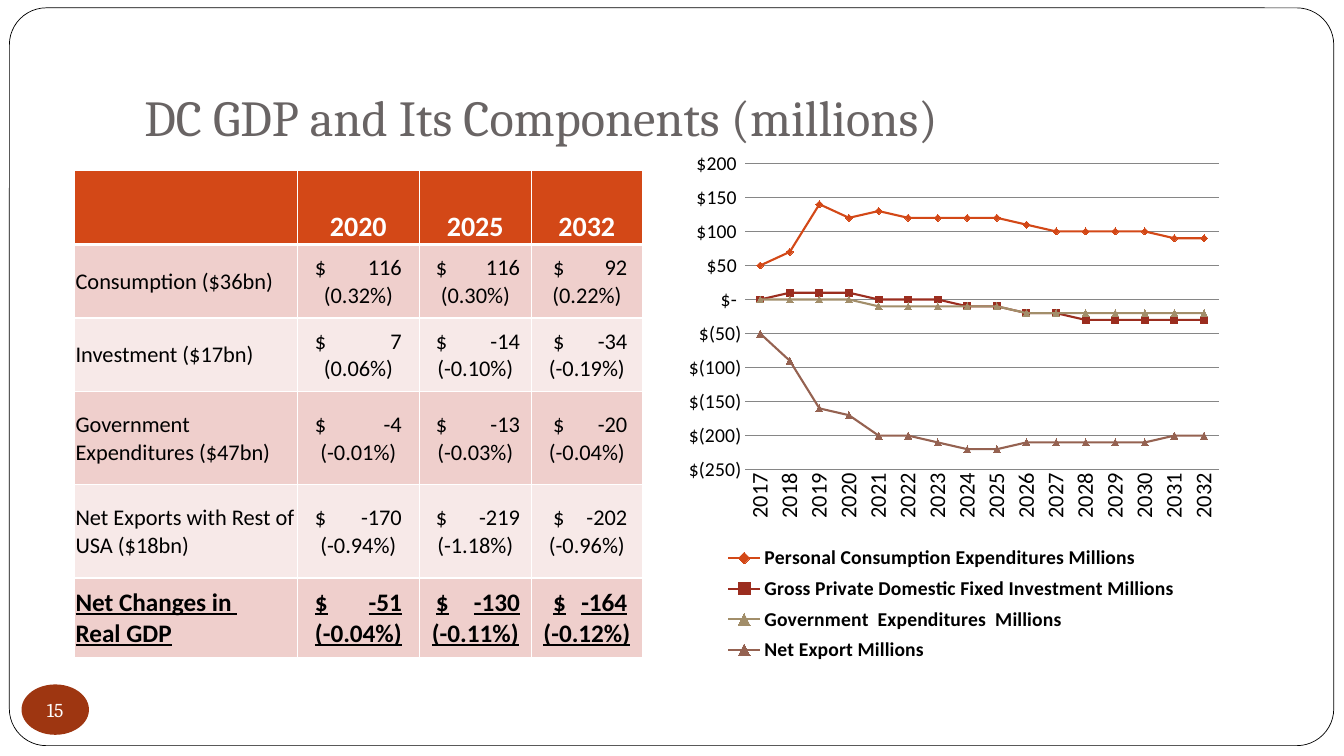
from dataclasses import dataclass

from lxml.etree import SubElement
from pptx import Presentation
from pptx.chart.chart import Chart
from pptx.chart.data import CategoryChartData
from pptx.dml.color import RGBColor
from pptx.enum.chart import (XL_AXIS_CROSSES, XL_CHART_TYPE, XL_LEGEND_POSITION, XL_MARKER_STYLE,
                             XL_TICK_LABEL_POSITION, XL_TICK_MARK)
from pptx.enum.shapes import MSO_SHAPE
from pptx.enum.text import MSO_ANCHOR, PP_ALIGN
from pptx.oxml import parse_xml
from pptx.oxml.ns import nsdecls, qn
from pptx.slide import Slide
from pptx.table import _Cell
from pptx.text.text import Font
from pptx.util import Pt


@dataclass(frozen=True)
class Theme:
    heading: str = "Cambria"
    body: str = "Calibri"
    white: str = "FFFFFF"
    black: str = "000000"
    title: str = "696464"
    header: str = "D34817"
    bands: tuple[str, str] = ("EFCFCC", "F7E9E8")
    badge: str = "9E3611"
    grid: str = "868686"
    title_size: int = 36
    header_size: int = 20
    body_size: int = 16
    total_size: int = 18
    label_size: int = 14


@dataclass(frozen=True)
class Amount:
    value: str
    share: str


@dataclass(frozen=True)
class Component:
    label: str
    amounts: tuple[Amount, ...]
    height: float
    total: bool = False


@dataclass(frozen=True)
class Column:
    year: str
    width: float
    dollar_tab: float
    value_tab: float


@dataclass(frozen=True)
class Line:
    name: str
    values: tuple[int, ...]
    color: str
    marker: XL_MARKER_STYLE


THEME = Theme()
LABEL_WIDTH = 159
HEADER_HEIGHT = 52.6
COLUMNS = (
    Column("2020", 87.4, 12, 74),
    Column("2025", 79.7, 11, 71),
    Column("2032", 79.7, 15, 68),
)
COMPONENTS = (
    Component("Consumption ($36bn)", (
        Amount("116", "(0.32%)"), Amount("116", "(0.30%)"), Amount("92", "(0.22%)")), 52.6),
    Component("Investment ($17bn)", (
        Amount("7", "(0.06%)"), Amount("-14", "(-0.10%)"), Amount("-34", "(-0.19%)")), 52.6),
    Component("Government\vExpenditures ($47bn)", (
        Amount("-4", "(-0.01%)"), Amount("-13", "(-0.03%)"), Amount("-20", "(-0.04%)")), 66.6),
    Component("Net Exports with Rest of USA ($18bn)", (
        Amount("-170", "(-0.94%)"), Amount("-219", "(-1.18%)"), Amount("-202", "(-0.96%)")), 66.6),
    Component("Net Changes in \vReal GDP", (
        Amount("-51", "(-0.04%)"), Amount("-130", "(-0.11%)"), Amount("-164", "(-0.12%)")), 56.6, True),
)
LINES = (
    Line("Personal Consumption Expenditures Millions",
         (50, 70, 140, 120, 130, 120, 120, 120, 120, 110, 100, 100, 100, 100, 90, 90),
         "D34817", XL_MARKER_STYLE.DIAMOND),
    Line("Gross Private Domestic Fixed Investment Millions",
         (0, 10, 10, 10, 0, 0, 0, -10, -10, -20, -20, -30, -30, -30, -30, -30),
         "9B2D1F", XL_MARKER_STYLE.SQUARE),
    Line("Government  Expenditures  Millions",
         (0, 0, 0, 0, -10, -10, -10, -10, -10, -20, -20, -20, -20, -20, -20, -20),
         "A28E6A", XL_MARKER_STYLE.TRIANGLE),
    Line("Net Export Millions",
         (-50, -90, -160, -170, -200, -200, -210, -220, -220, -210, -210, -210, -210, -210, -200, -200),
         "956251", XL_MARKER_STYLE.TRIANGLE),
)


def rgb(color: str) -> RGBColor:
    return RGBColor.from_string(color)


def style(font: Font, name: str, size: float, color: str, bold: bool = False) -> None:
    font.name, font.size, font.bold = name, Pt(size), bold
    font.color.rgb = rgb(color)


def draw_title(s: Slide) -> None:
    sp = s.shapes.title
    sp.left, sp.top, sp.width, sp.height = Pt(96), Pt(21.6), Pt(816), Pt(90)
    tf = sp.text_frame
    tf.text = "DC GDP and Its Components (millions)"
    tf.vertical_anchor = MSO_ANCHOR.BOTTOM
    tf.margin_bottom = Pt(7.2)
    p = tf.paragraphs[0]
    p.alignment = PP_ALIGN.LEFT
    style(p.runs[0].font, THEME.heading, THEME.title_size, THEME.title)


def draw_frame(s: Slide) -> None:
    sp = s.shapes.add_shape(MSO_SHAPE.ROUNDED_RECTANGLE, Pt(6.7), Pt(5.6), Pt(946), Pt(527))
    sp.adjustments[0] = 0.05
    sp.shadow.inherit = False
    sp.fill.solid()
    sp.fill.fore_color.rgb = rgb(THEME.white)
    sp.line.color.rgb = rgb(THEME.black)
    sp.line.width = Pt(0.5)
    s.shapes.title.element.addprevious(sp.element)


def draw_badge(s: Slide) -> None:
    sp = s.shapes.add_shape(MSO_SHAPE.OVAL, Pt(15.4), Pt(488.9), Pt(48.2), Pt(36))
    sp.shadow.inherit = False
    sp.fill.solid()
    sp.fill.fore_color.rgb = rgb(THEME.badge)
    sp.line.fill.background()
    tf = sp.text_frame
    tf.margin_left = tf.margin_right = tf.margin_top = tf.margin_bottom = 0
    tf.word_wrap = False
    tf.vertical_anchor = MSO_ANCHOR.MIDDLE
    tf.text = "15"
    p = tf.paragraphs[0]
    p.alignment = PP_ALIGN.CENTER
    style(p.runs[0].font, THEME.heading, THEME.label_size, THEME.white)


def format_cell(cell: _Cell, fill: str, header: bool = False) -> None:
    cell.fill.solid()
    cell.fill.fore_color.rgb = rgb(fill)
    cell.margin_left = cell.margin_right = cell.margin_top = Pt(0.72)
    cell.margin_bottom = 0
    cell.vertical_anchor = MSO_ANCHOR.BOTTOM if header else MSO_ANCHOR.MIDDLE
    for i, side in enumerate("LRTB"):
        width = Pt(3 if header and side == "B" else 1)
        cell._tc.get_or_add_tcPr().insert(i, parse_xml(
            f'<a:ln{side} {nsdecls("a")} w="{width}"><a:solidFill>'
            f'<a:srgbClr val="{THEME.white}"/></a:solidFill></a:ln{side}>'))


def write_amount(cell: _Cell, amount: Amount, column: Column) -> None:
    tf = cell.text_frame
    p = tf.paragraphs[0]
    p.alignment = PP_ALIGN.LEFT
    for text in ("\t", f"$\t{amount.value}"):
        p.add_run().text = text
    tabs = SubElement(p._p.get_or_add_pPr(), qn("a:tabLst"))
    for pos, align in ((column.dollar_tab, "l"), (column.value_tab, "r")):
        SubElement(tabs, qn("a:tab"), pos=str(Pt(pos)), algn=align)
    p = tf.add_paragraph()
    p.text = amount.share
    p.alignment = PP_ALIGN.CENTER


def draw_table(s: Slide) -> None:
    widths = [LABEL_WIDTH, *(c.width for c in COLUMNS)]
    heights = [HEADER_HEIGHT, *(c.height for c in COMPONENTS)]
    table = s.shapes.add_table(len(heights), len(widths), Pt(53.3), Pt(122),
                               Pt(sum(widths)), Pt(sum(heights))).table
    for col, width in zip(table.columns, widths):
        col.width = Pt(width)
    for row, height in zip(table.rows, heights):
        row.height = Pt(height)
    for i, year in enumerate(["", *(c.year for c in COLUMNS)]):
        cell = table.cell(0, i)
        format_cell(cell, THEME.header, header=True)
        p = cell.text_frame.paragraphs[0]
        p.text = year
        p.alignment = PP_ALIGN.CENTER
        for r in p.runs:
            style(r.font, THEME.body, THEME.header_size, THEME.white, True)
    for i, component in enumerate(COMPONENTS):
        cells = list(table.rows[i + 1].cells)
        cells[0].text_frame.text = component.label
        for cell, amount, column in zip(cells[1:], component.amounts, COLUMNS):
            write_amount(cell, amount, column)
        size = THEME.total_size if component.total else THEME.body_size
        for cell in cells:
            format_cell(cell, THEME.bands[i % 2])
            for r in (r for p in cell.text_frame.paragraphs for r in p.runs):
                style(r.font, THEME.body, size, THEME.black, component.total)
                r.font.underline = component.total and r.text != "\t"


def place(parent, x: float, y: float, w: float, h: float, inner: bool = False) -> None:
    target = '<c:layoutTarget val="inner"/>' if inner else ""
    modes = '<c:xMode val="edge"/><c:yMode val="edge"/>'
    sizes = "".join(f'<c:{k} val="{v}"/>' for k, v in zip("xywh", (x, y, w, h)))
    for old in parent.findall(qn("c:layout")):
        parent.remove(old)
    layout = parse_xml(f'<c:layout {nsdecls("c")}><c:manualLayout>{target}{modes}{sizes}'
                       '</c:manualLayout></c:layout>')
    parent.insert(0 if inner else 1, layout)


def format_axes(chart: Chart) -> None:
    cat, val = chart.category_axis, chart.value_axis
    for axis, size in ((cat, THEME.body_size), (val, THEME.label_size)):
        axis.major_tick_mark = axis.minor_tick_mark = XL_TICK_MARK.NONE
        axis.tick_label_position = XL_TICK_LABEL_POSITION.NEXT_TO_AXIS
        style(axis.tick_labels.font, THEME.body, size, THEME.black)
    cat.format.line.color.rgb = rgb(THEME.grid)
    cat._element.find(qn("c:txPr")).find(qn("a:bodyPr")).set("rot", "-5400000")
    val.minimum_scale, val.maximum_scale, val.major_unit = -250, 200, 50
    val.crosses = XL_AXIS_CROSSES.MINIMUM
    val.format.line.fill.background()
    val.major_gridlines.format.line.color.rgb = rgb(THEME.grid)
    val.tick_labels.number_format = r'_("$"* #,##0_);_("$"* \(#,##0\);_("$"* "-"_);_(@_)'
    val.tick_labels.number_format_is_linked = False


def draw_chart(s: Slide) -> None:
    data = CategoryChartData()
    data.categories = [str(year) for year in range(2017, 2033)]
    for line in LINES:
        data.add_series(line.name, line.values)
    chart = s.shapes.add_chart(XL_CHART_TYPE.LINE_MARKERS, Pt(444.6), Pt(101.4),
                               Pt(439.2), Pt(383.8), data).chart
    chart.has_title = False
    style(chart.font, THEME.body, 10, THEME.black)
    format_axes(chart)
    plot = chart.plots[0]
    plot.vary_by_categories = False
    for series, line in zip(plot.series, LINES):
        series.smooth = False
        series.format.line.color.rgb = rgb(line.color)
        series.format.line.width = Pt(1.5)
        series.marker.style, series.marker.size = line.marker, 5
        series.marker.format.fill.solid()
        series.marker.format.fill.fore_color.rgb = rgb(line.color)
        series.marker.format.line.color.rgb = rgb(line.color)
    chart.has_legend = True
    legend = chart.legend
    legend.position = XL_LEGEND_POSITION.BOTTOM
    legend.include_in_layout = False
    style(legend.font, THEME.body, THEME.label_size, THEME.black, True)
    place(legend._element, 0.11, 0.74, 0.85, 0.24)
    place(plot._element.getparent(), 0.2, 0.04, 0.77, 0.57, inner=True)


def main() -> None:
    prs = Presentation()
    prs.slide_width, prs.slide_height = Pt(960), Pt(540)
    s = prs.slides.add_slide(prs.slide_layouts[5])
    draw_title(s)
    draw_frame(s)
    draw_table(s)
    draw_chart(s)
    draw_badge(s)
    prs.save("out.pptx")


if __name__ == "__main__":
    main()
